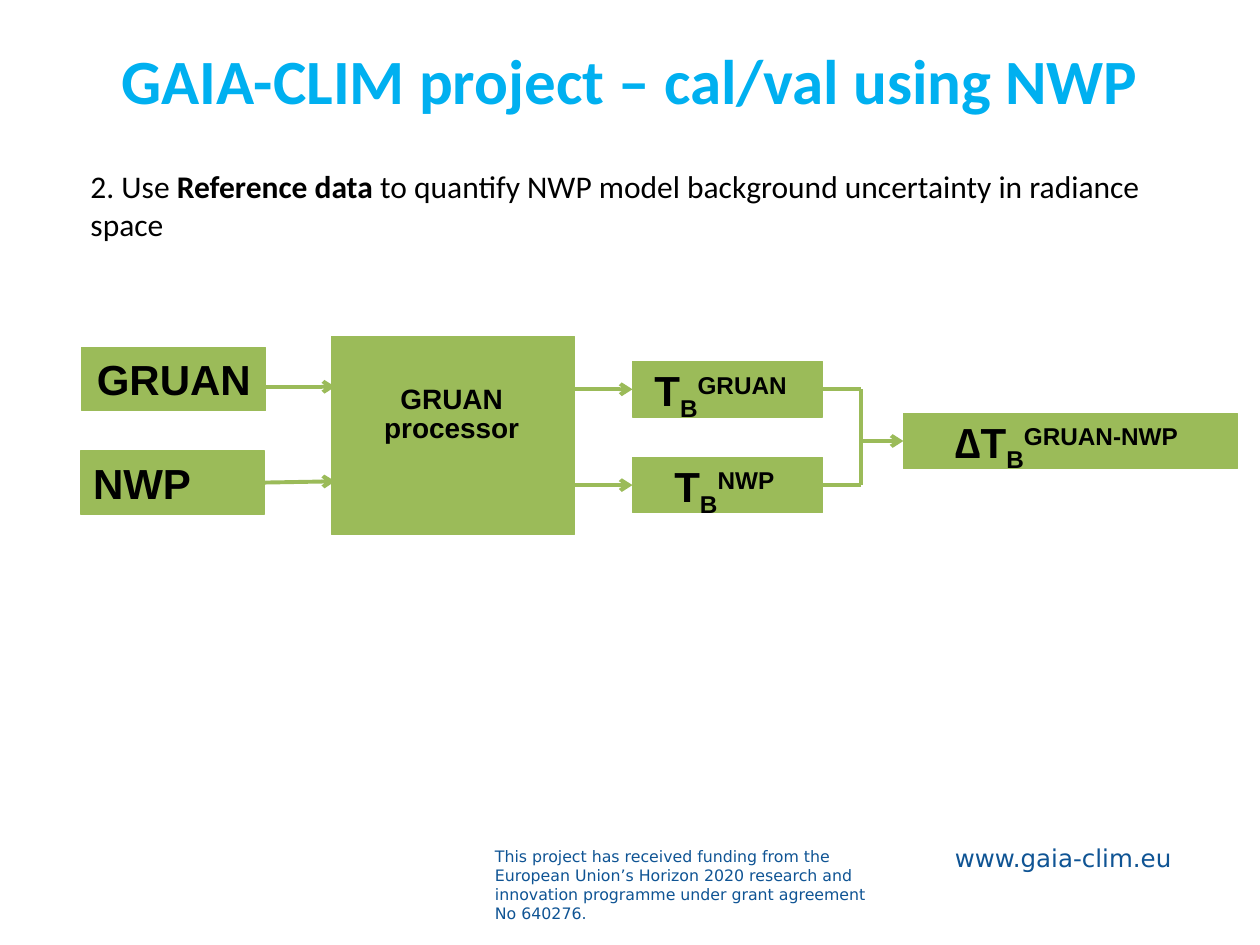
from dataclasses import dataclass

from lxml.etree import SubElement
from pptx import Presentation
from pptx.dml.color import RGBColor
from pptx.enum.shapes import MSO_CONNECTOR, MSO_SHAPE
from pptx.enum.text import MSO_ANCHOR, PP_ALIGN
from pptx.oxml.ns import qn
from pptx.util import Inches, Pt


@dataclass(frozen=True)
class Theme:
    green: str = "9BBB59"
    cyan: str = "00B0F0"
    navy: str = "0F5494"
    black: str = "000000"
    head: str = "Calibri"
    label: str = "Arial"
    foot: str = "DejaVu Sans"
    title: int = 36
    large: int = 24
    body: int = 18
    mid: int = 16
    site: int = 14
    small: int = 9
    edge: float = 0.75
    wire: float = 2.25


THEME = Theme()
TOP, LEFT, RIGHT = 0, 1, 3  # connection sites of a rectangle


def write(para, text, size=THEME.large, face=THEME.label, color=THEME.black,
          bold=False, base=0):
    """Add a run; base is the baseline shift in percent."""
    run = para.add_run()
    run.text = text
    font = run.font
    font.size, font.name, font.bold = Pt(size), face, bold
    font.color.rgb = RGBColor.from_string(color)
    if base:
        font._element.set("baseline", str(base * 1000))


def setup(shape, align=PP_ALIGN.LEFT, anchor=MSO_ANCHOR.TOP, space=1.0):
    """Prepare the text frame and return its first paragraph."""
    frame = shape.text_frame
    frame.word_wrap = True
    frame.vertical_anchor = anchor
    para = frame.paragraphs[0]
    para.alignment = align
    if space != 1:
        para.line_spacing = space
    return para


def area(slide, x, y, w, h, **opts):
    box = slide.shapes.add_textbox(Inches(x), Inches(y), Inches(w), Inches(h))
    return setup(box, **opts)


def block(slide, x, y, w, h):
    box = slide.shapes.add_shape(
        MSO_SHAPE.RECTANGLE, Inches(x), Inches(y), Inches(w), Inches(h))
    box.shadow.inherit = False
    box.fill.solid()
    box.fill.fore_color.rgb = RGBColor.from_string(THEME.green)
    box.line.color.rgb = RGBColor.from_string(THEME.green)
    box.line.width = Pt(THEME.edge)
    return box


def symbol(slide, x, y, w, main, power, pad):
    """Block with a letter, subscript B and a superscript; pad shifts left."""
    box = block(slide, x, y, w, 0.44)
    para = setup(box, align=PP_ALIGN.CENTER, space=0.85)
    box.text_frame.margin_right = Inches(0.1 + pad)
    write(para, main, bold=True)
    write(para, "B", bold=True, base=-25)
    write(para, power, bold=True, base=30)
    return box


def link(slide, start, end, tail=None, head=None, arrow=True):
    """Line from start to end; tail and head are (shape, site) joints."""
    wire = slide.shapes.add_connector(
        MSO_CONNECTOR.STRAIGHT, *(Inches(v) for v in (*start, *end)))
    if tail:
        wire.begin_connect(*tail)
    if head:
        wire.end_connect(*head)
    wire.line.color.rgb = RGBColor.from_string(THEME.green)
    wire.line.width = Pt(THEME.wire)
    props = wire._element.spPr
    if arrow:
        SubElement(props.find(qn("a:ln")), qn("a:tailEnd"), type="arrow")
    SubElement(props, qn("a:effectLst"))


def texts(slide):
    title = area(slide, 0.5, 0.08, 9, 1.1,
                 align=PP_ALIGN.CENTER, anchor=MSO_ANCHOR.MIDDLE)
    write(title, "GAIA-CLIM project – cal/val using NWP", size=THEME.title,
          face=THEME.head, color=THEME.cyan, bold=True)

    body = area(slide, 0.62, 1.28, 9.06, 0.71)
    for text, bold in (
            ("2. Use ", False), ("Reference data ", True),
            ("to quantify NWP model background uncertainty in radiance space",
             False)):
        write(body, text, size=THEME.body, face=THEME.head, bold=bold)

    fund = area(slide, 3.83, 6.67, 3.28, 0.71)
    write(fund, "This project has received funding from the European Union’s "
          "Horizon 2020 research and innovation programme under grant "
          "agreement No 640276.",
          size=THEME.small, face=THEME.foot, color=THEME.navy)
    site = area(slide, 7.48, 6.64, 2.07, 0.34)
    write(site, "www.gaia-clim.eu",
          size=THEME.site, face=THEME.foot, color=THEME.navy)


def flow(slide):
    # Processor and its label
    block(slide, 2.63, 2.67, 1.93, 1.57)
    name = block(slide, 2.77, 3.02, 1.63, 0.56)
    write(setup(name, align=PP_ALIGN.CENTER, space=0.85), "GRUAN processor",
          size=THEME.mid, bold=True)

    # Inputs
    gruan = block(slide, 0.65, 2.76, 1.46, 0.5)
    write(setup(gruan, align=PP_ALIGN.CENTER), "GRUAN", bold=True)
    nwp = block(slide, 0.64, 3.58, 1.46, 0.5)
    write(setup(nwp), "NWP", bold=True)
    link(slide, (2.03, 3.07), (2.66, 3.07))
    link(slide, (2.1, 3.83), (2.66, 3.82), tail=(nwp, RIGHT))

    # Outputs, gathered on a vertical bus
    bus, rows = 6.83, (3.09, 3.85)
    for y, power, pad in zip(rows, ("GRUAN", "NWP"), (0.11, 0.05)):
        box = symbol(slide, 5.02, y - 0.22, 1.51, "T", power, pad)
        link(slide, (4.54, y), (5.02, y), head=(box, LEFT))
        link(slide, (6.53, y), (bus, y), tail=(box, RIGHT), arrow=False)
    link(slide, (bus, rows[0]), (bus, rows[1]), arrow=False)

    # Difference
    diff = symbol(slide, 7.17, 3.28, 2.65, "∆T", "GRUAN-NWP", 0.06)
    link(slide, (bus, 3.5), (7.17, 3.5), head=(diff, LEFT))


def main():
    deck = Presentation()
    deck.slide_width, deck.slide_height = Inches(10), Inches(7.5)
    slide = deck.slides.add_slide(deck.slide_layouts[6])
    texts(slide)
    flow(slide)
    deck.save("out.pptx")


if __name__ == "__main__":
    main()
